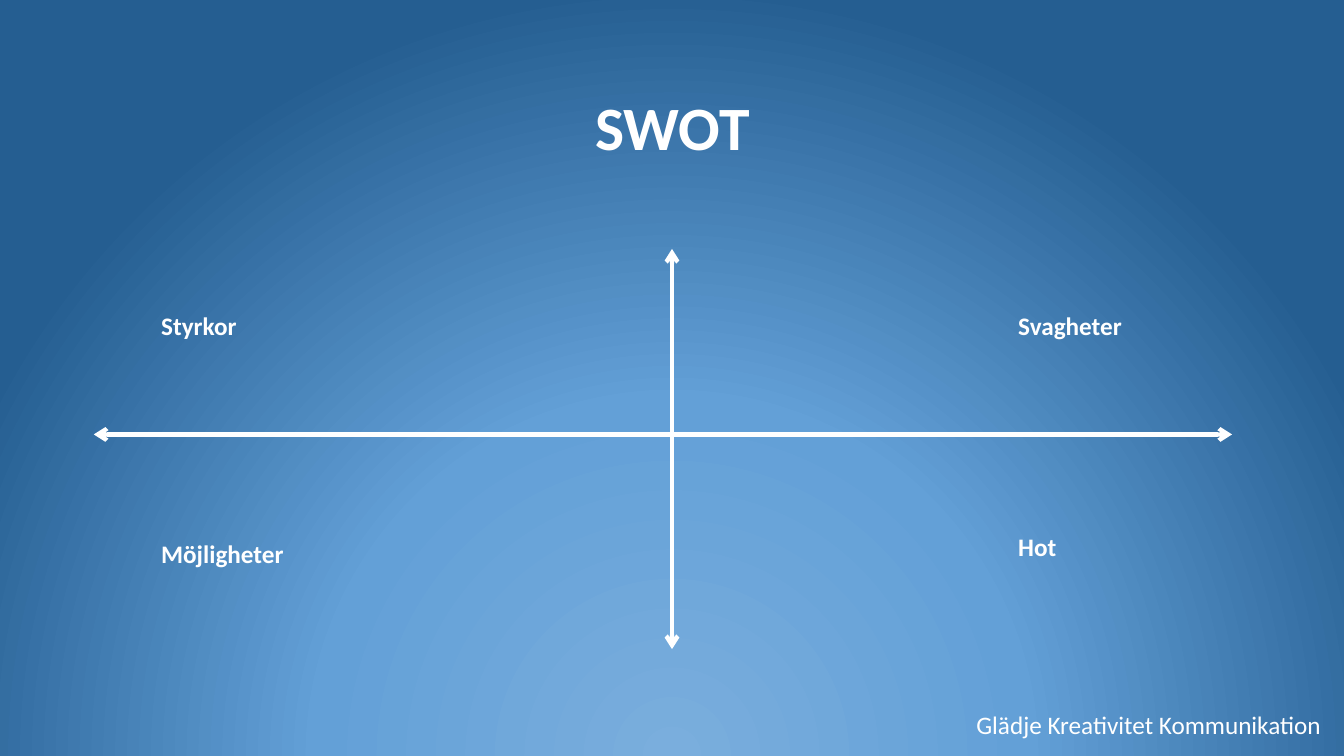
from lxml import etree
from pptx import Presentation
from pptx.dml.color import RGBColor
from pptx.enum.shapes import MSO_CONNECTOR
from pptx.enum.text import MSO_ANCHOR, MSO_AUTO_SIZE, PP_ALIGN
from pptx.oxml import parse_xml
from pptx.oxml.ns import nsdecls, qn
from pptx.util import Inches, Pt

LINE = MSO_CONNECTOR.STRAIGHT
MIDDLE, TOP = MSO_ANCHOR.MIDDLE, MSO_ANCHOR.TOP
LEFT, CENTER, RIGHT = PP_ALIGN.LEFT, PP_ALIGN.CENTER, PP_ALIGN.RIGHT
GROW = MSO_AUTO_SIZE.SHAPE_TO_FIT_TEXT
WIDE, HIGH = 13.33, 7.5
WHITE = "FFFFFF"
STOPS = [(0, "7AAEDD"), (46, "63A0D7"), (100, "255E91")]


def color(code):
    return RGBColor.from_string(code)


def glow(slide):
    """Radial background, centred below the slide."""
    slide.background.fill.solid()
    stops = "".join(
        f'<a:gs pos="{pos * 1000}"><a:srgbClr val="{code}"/></a:gs>'
        for pos, code in STOPS)
    grad = parse_xml(
        f'<a:gradFill {nsdecls("a")} rotWithShape="1"><a:gsLst>{stops}</a:gsLst>'
        '<a:path path="circle"><a:fillToRect l="50000" t="130000" '
        'r="50000" b="-30000"/></a:path></a:gradFill>')
    back = next(slide.element.iter(qn("p:bgPr")))
    back.replace(back[0], grad)


def write(slide, box, text, size=18, bold=True, align=LEFT, anchor=TOP):
    shape = slide.shapes.add_textbox(*map(Inches, box))
    frame = shape.text_frame
    frame.word_wrap = True
    frame.vertical_anchor = anchor
    if anchor == TOP:
        frame.auto_size = GROW
    para = frame.paragraphs[0]
    para.text = text
    para.alignment = align
    font = para.font
    font.name, font.size, font.bold = "Calibri", Pt(size), bold
    font.color.rgb = color(WHITE)
    return para


def arrow(slide, *ends):
    """White line with an arrowhead at both ends."""
    axis = slide.shapes.add_connector(LINE, *map(Inches, ends))
    axis.line.color.rgb = color(WHITE)
    axis.line.width = Pt(3)
    stroke = axis.line._get_or_add_ln()
    for end in ("a:headEnd", "a:tailEnd"):
        etree.SubElement(stroke, qn(end), type="arrow")
    etree.SubElement(axis.element.spPr, qn("a:effectLst"))


def cross(slide, x, y, w, h):
    """The two axes and a label in each quarter of the box."""
    mid = WIDE / 2
    arrow(slide, mid, y, mid, y + h)
    arrow(slide, x, y + 1.84, x + w, y + 1.84)
    labels = [("Styrkor", 0.57, 0.56), ("Svagheter", 9.07, 0.56),
              ("Möjligheter", 0.57, 2.82), ("Hot", 9.07, 2.75)]
    for text, dx, dy in labels:
        write(slide, (x + dx, y + dy, 2.22, 0.4), text)


def main():
    deck = Presentation()
    deck.slide_width, deck.slide_height = Inches(WIDE), Inches(HIGH)
    slide = deck.slides.add_slide(deck.slide_layouts[6])
    glow(slide)
    # Footer
    write(slide, (8.18, 6.99, 5.02, 0.4), "Glädje Kreativitet Kommunikation",
          bold=False, align=RIGHT)
    # Title
    title = write(slide, (0.92, 0.57, 11.5, 1.45), "SWOT", 44,
                  align=CENTER, anchor=MIDDLE)
    title.line_spacing = 0.9
    # Diagram
    cross(slide, 0.93, 2.47, 11.29, 3.97)
    deck.save("out.pptx")


if __name__ == "__main__":
    main()
